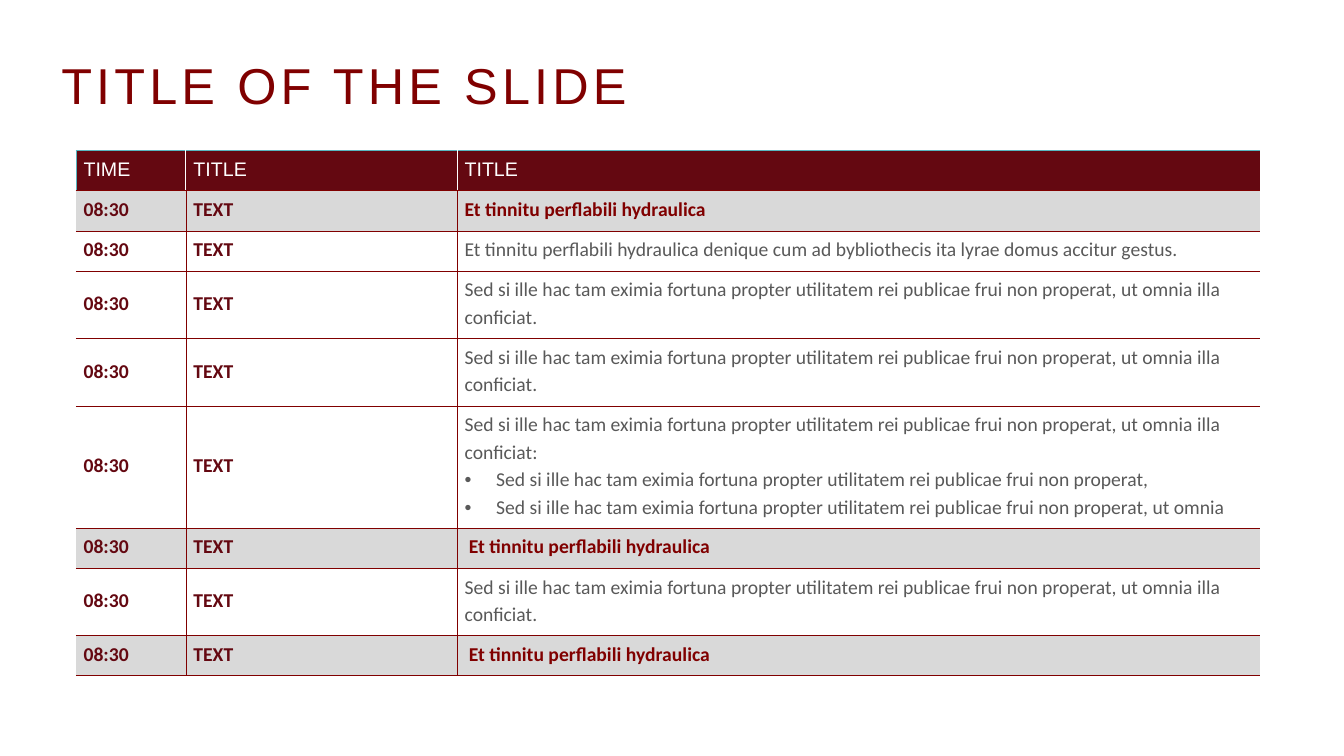
"""Build a slide holding a title and a timed agenda table."""
import dataclasses

import lxml.etree
import pptx
import pptx.dml.color
import pptx.enum.text
import pptx.oxml.ns
import pptx.util

Pt = pptx.util.Pt
qualified = pptx.oxml.ns.qn


@dataclasses.dataclass(frozen=True)
class Theme:
    red: str = "800000"
    wine: str = "640811"
    teal: str = "58B6C0"
    white: str = "FFFFFF"
    band: str = "D9D9D9"
    grey: str = "595959"
    heading_font: str = "Arial"
    body_font: str = "Calibri"
    title_size: float = 36
    table_size: float = 14
    thin: float = 0.25
    medium: float = 0.5
    thick: float = 1


THEME = Theme()
NO_STYLE = "{2D5ABB26-0587-4C30-8999-92F81FD0307C}"
COLUMN_WIDTHS = (78.5, 193.7, 573.8)
HEADER_HEIGHT = 26.6
LINE_HEIGHT = 19.5
ROW_PADDING = 9.2
BULLET_INDENT = 22.5
SECTION_INDENT = 3

SECTION = "Et tinnitu perflabili hydraulica"
SENTENCE = "Sed si ille hac tam eximia fortuna propter utilitatem rei publicae frui non properat,"
LONG_SENTENCE = SENTENCE + " ut omnia illa conficiat"


@dataclasses.dataclass(frozen=True)
class AgendaRow:
    text: str
    lines: int = 1
    section: bool = False
    indent: float = 0
    bullets: tuple = ()


AGENDA = (
    AgendaRow(SECTION, section=True),
    AgendaRow(SECTION + " denique cum ad bybliothecis ita lyrae domus accitur gestus."),
    AgendaRow(LONG_SENTENCE + ".", lines=2),
    AgendaRow(LONG_SENTENCE + ".", lines=2),
    AgendaRow(LONG_SENTENCE + ":", lines=4, bullets=(SENTENCE, SENTENCE + " ut omnia")),
    AgendaRow(SECTION, section=True, indent=SECTION_INDENT),
    AgendaRow(LONG_SENTENCE + ".", lines=2),
    AgendaRow(SECTION, section=True, indent=SECTION_INDENT),
)


def add_run(paragraph, text, font_name, size, color, bold=False):
    """Add one styled run to a paragraph."""
    run = paragraph.add_run()
    run.text = text
    run.font.name = font_name
    run.font.size = Pt(size)
    run.font.bold = bold
    run.font.color.rgb = pptx.dml.color.RGBColor.from_string(color)
    return run


def indent_paragraph(paragraph, left, bullet=False):
    """Indent a paragraph, hanging a bullet in the indent if asked."""
    properties = paragraph._p.get_or_add_pPr()
    properties.set("marL", str(Pt(left)))
    if bullet:
        properties.set("indent", str(-Pt(left)))
        font = lxml.etree.SubElement(properties, qualified("a:buFont"))
        font.set("typeface", THEME.heading_font)
        lxml.etree.SubElement(properties, qualified("a:buChar")).set("char", "•")


def set_borders(cell, **borders):
    """Draw cell borders given as side=(color, width)."""
    properties = cell._tc.get_or_add_tcPr()
    position = 0
    for side in "LRTB":
        if side not in borders:
            continue
        color, width = borders[side]
        line = lxml.etree.Element(qualified("a:ln" + side), w=str(Pt(width)))
        fill = lxml.etree.SubElement(line, qualified("a:solidFill"))
        lxml.etree.SubElement(fill, qualified("a:srgbClr")).set("val", color)
        properties.insert(position, line)
        position += 1


def prepare_cell(cell, fill_color):
    """Set margins, anchor and fill of a cell and return its first paragraph."""
    cell.margin_left = cell.margin_right = Pt(5.5)
    cell.margin_top = Pt(2.8)
    cell.margin_bottom = Pt(6.4)
    cell.vertical_anchor = pptx.enum.text.MSO_ANCHOR.MIDDLE
    if fill_color:
        cell.fill.solid()
        cell.fill.fore_color.rgb = pptx.dml.color.RGBColor.from_string(fill_color)
    else:
        cell.fill.background()
    paragraph = cell.text_frame.paragraphs[0]
    paragraph.line_spacing = 1.15
    return paragraph


def add_title(slide, text):
    """Add the letter-spaced slide title."""
    box = slide.shapes.add_textbox(Pt(36.7), Pt(36.7), Pt(828), Pt(52))
    frame = box.text_frame
    frame.word_wrap = True
    frame.vertical_anchor = pptx.enum.text.MSO_ANCHOR.MIDDLE
    paragraph = frame.paragraphs[0]
    paragraph.line_spacing = 0.9
    run = add_run(paragraph, text, THEME.heading_font, THEME.title_size, THEME.red)
    run.font._element.set("spc", "300")


def fill_header(table, labels):
    """Fill the dark header row."""
    for column, label in enumerate(labels):
        cell = table.cell(0, column)
        paragraph = prepare_cell(cell, THEME.wine)
        add_run(paragraph, label, THEME.heading_font, THEME.table_size, THEME.white)
        borders = {"T": (THEME.teal, THEME.medium), "B": (THEME.red, THEME.thick)}
        borders["L"] = (THEME.white if column else THEME.teal, THEME.medium)
        if column < len(labels) - 1:
            borders["R"] = (THEME.white, THEME.medium)
        set_borders(cell, **borders)


def fill_agenda_row(table, index, entry):
    """Fill one agenda row with its time, label and description."""
    fill_color = THEME.band if entry.section else None
    thin = (THEME.red, THEME.thin)
    thick = (THEME.red, THEME.thick)
    text_color = THEME.red if entry.section else THEME.grey
    texts = (("08:30", THEME.wine, True), ("TEXT", THEME.wine, True),
             (entry.text, text_color, entry.section))
    for column, (text, color, bold) in enumerate(texts):
        cell = table.cell(index, column)
        paragraph = prepare_cell(cell, fill_color)
        add_run(paragraph, text, THEME.body_font, THEME.table_size, color, bold)
        borders = {"T": thick if index == 1 else thin,
                   "B": thick if index == len(AGENDA) else thin}
        if column > 0:
            borders["L"] = thin
        if column < len(texts) - 1:
            borders["R"] = thin
        set_borders(cell, **borders)
    if entry.indent:
        indent_paragraph(paragraph, entry.indent)
    for bullet in entry.bullets:
        paragraph = cell.text_frame.add_paragraph()
        paragraph.line_spacing = 1.15
        indent_paragraph(paragraph, BULLET_INDENT, bullet=True)
        add_run(paragraph, bullet, THEME.body_font, THEME.table_size, text_color)


def add_agenda(slide):
    """Add the agenda table."""
    heights = [HEADER_HEIGHT] + [ROW_PADDING + LINE_HEIGHT * entry.lines for entry in AGENDA]
    frame = slide.shapes.add_table(len(heights), len(COLUMN_WIDTHS), Pt(54.2), Pt(107.6),
                                   Pt(sum(COLUMN_WIDTHS)), Pt(sum(heights)))
    table = frame.table
    table.first_row = table.horz_banding = False
    table._tbl.tblPr.find(qualified("a:tableStyleId")).text = NO_STYLE
    for column, width in zip(table.columns, COLUMN_WIDTHS):
        column.width = Pt(width)
    for row, height in zip(table.rows, heights):
        row.height = Pt(height)
    fill_header(table, ("TIME", "TITLE", "TITLE"))
    for index, entry in enumerate(AGENDA, start=1):
        fill_agenda_row(table, index, entry)


def main():
    """Create the presentation and save it."""
    presentation = pptx.Presentation()
    presentation.slide_width = Pt(960)
    presentation.slide_height = Pt(540)
    slide = presentation.slides.add_slide(presentation.slide_layouts[6])
    add_title(slide, "TITLE OF THE SLIDE")
    add_agenda(slide)
    presentation.save("out.pptx")


if __name__ == "__main__":
    main()
